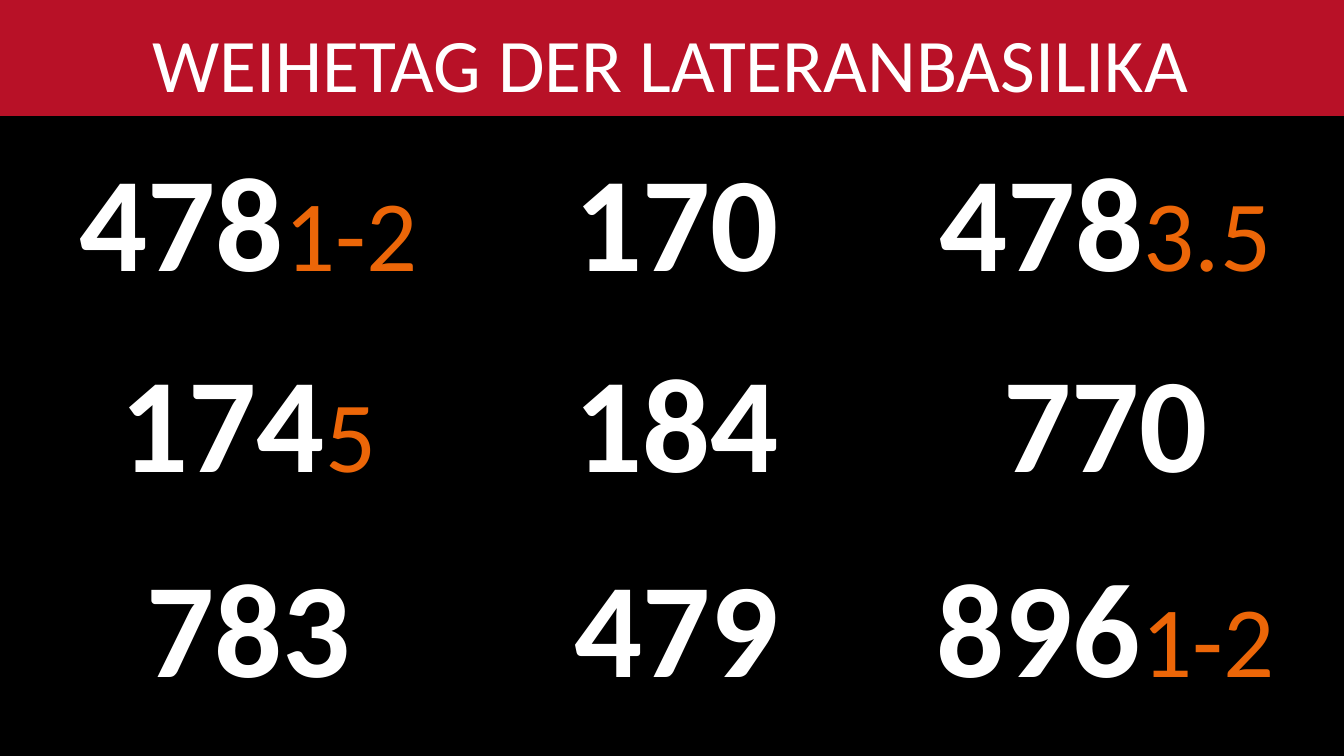
from pptx import Presentation
from pptx.dml.color import RGBColor
from pptx.enum.shapes import MSO_SHAPE
from pptx.enum.text import MSO_AUTO_SIZE, PP_ALIGN
from pptx.util import Inches, Pt

TITLE = "WEIHETAG DER LATERANBASILIKA"
# Each cell: song number, verses
SONGS = [
    [("478", "1-2"), ("170", ""), ("478", "3.5")],
    [("174", "5"), ("184", ""), ("770", "")],
    [("783", ""), ("479", ""), ("896", "1-2")],
]
ROW_HEIGHTS = [2, 2.03, 1.98]
COL_WIDTH = 4.25
NO_GRID_STYLE = "{2D5ABB26-0587-4C30-8999-92F81FD0307C}"


class Theme:
    font = "Calibri"
    back = RGBColor.from_string("000000")
    band = RGBColor.from_string("B81127")
    text = RGBColor.from_string("FFFFFF")
    verse = RGBColor.from_string("EC6608")
    title_size, song_size, verse_size = Pt(54), Pt(96), Pt(72)


def add_run(p, text, size, color, bold=False):
    r = p.add_run()
    r.text = text
    r.font.name = Theme.font
    r.font.size = size
    r.font.bold = bold
    r.font.color.rgb = color
    return r


def add_band(s):
    band = s.shapes.add_shape(MSO_SHAPE.RECTANGLE, 0, 0, Inches(13.33), Inches(1.15))
    band.shadow.inherit = False
    band.fill.solid()
    band.fill.fore_color.rgb = Theme.band
    band.line.fill.background()


def add_songs(s):
    frame = s.shapes.add_table(
        len(SONGS), len(SONGS[0]), Inches(0.34), Inches(1.37),
        Inches(COL_WIDTH * len(SONGS[0])), Inches(sum(ROW_HEIGHTS)))
    table = frame.table
    table.first_row = table.horz_banding = False
    frame._element.xpath(".//a:tableStyleId")[0].text = NO_GRID_STYLE
    for col in table.columns:
        col.width = Inches(COL_WIDTH)
    for i, (height, songs) in enumerate(zip(ROW_HEIGHTS, SONGS)):
        table.rows[i].height = Inches(height)
        for j, (number, verses) in enumerate(songs):
            cell = table.cell(i, j)
            cell.fill.background()
            p = cell.text_frame.paragraphs[0]
            p.alignment = PP_ALIGN.CENTER
            add_run(p, number, Theme.song_size, Theme.text, bold=True)
            if verses:
                add_run(p, verses, Theme.verse_size, Theme.verse)


def add_title(s):
    box = s.shapes.add_textbox(Inches(0.17), Inches(0.12), Inches(12.96), Inches(1.01))
    tf = box.text_frame
    tf.word_wrap = True
    tf.auto_size = MSO_AUTO_SIZE.SHAPE_TO_FIT_TEXT
    p = tf.paragraphs[0]
    p.alignment = PP_ALIGN.CENTER
    add_run(p, TITLE, Theme.title_size, Theme.text)


def main():
    prs = Presentation()
    prs.slide_width, prs.slide_height = Inches(13.33), Inches(7.5)
    s = prs.slides.add_slide(prs.slide_layouts[6])
    s.background.fill.solid()
    s.background.fill.fore_color.rgb = Theme.back
    add_band(s)
    add_songs(s)
    add_title(s)
    prs.save("out.pptx")


if __name__ == "__main__":
    main()
